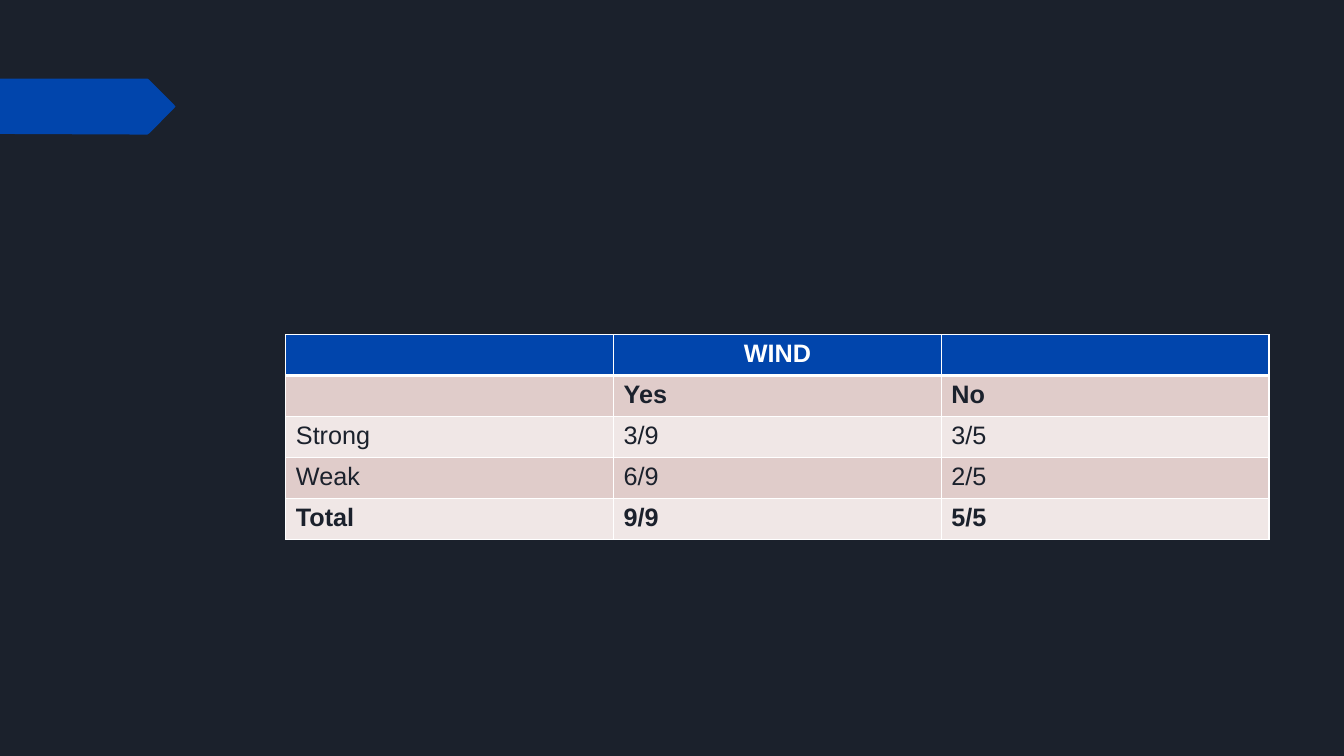
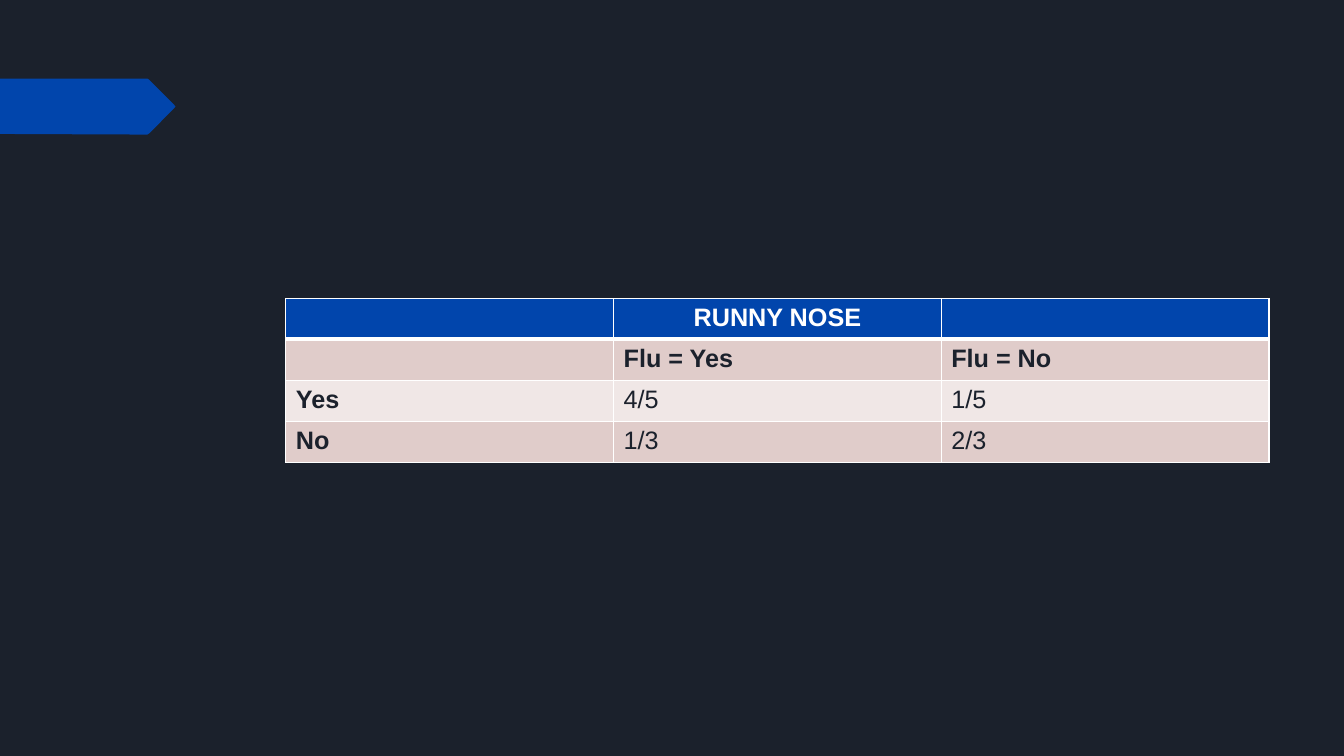
from lxml import etree
from pptx import Presentation
from pptx import util as u
from pptx.dml.color import RGBColor
from pptx.enum import text
from pptx.oxml.ns import qn

WIDTH, HEIGHT = u.Inches(13.33), u.Inches(7.5)
COLUMN, ROW = WIDTH / 100, HEIGHT / 100

NIGHT = RGBColor(0x1B, 0x21, 0x2C)
BLUE = RGBColor(0x01, 0x45, 0xAC)
ROSE = RGBColor(0xE0, 0xCC, 0xCA)
PALE_ROSE = RGBColor(0xF0, 0xE7, 0xE6)
WHITE = RGBColor(0xFF, 0xFF, 0xFF)
FONT = "Arial"

THIN, THICK = 1, 3
TABLE_LEFT, TABLE_WIDTH, ROW_HEIGHT = 21.27, 73.15, 5.42
BAND_BOX = (0, 10.4, 13.06, 7.4)
BAND_OUTLINE = [
    (0, 0), (0.84, 0), (0.85, 0.02), (0.99, 0.46), (1, 0.5),
    (0.99, 0.54), (0.85, 0.98), (0.84, 1), (0.78, 1), (0, 0.99),
]

WIND = [
    ["", "WIND", ""],
    ["", "Yes", "No"],
    ["Strong", "3/9", "3/5"],
    ["Weak", "6/9", "2/5"],
    ["Total", "9/9", "5/5"],
]
RUNNY_NOSE = [
    ["", "RUNNY NOSE", ""],
    ["", "Flu = Yes", "Flu = No"],
    ["Yes", "4/5", "1/5"],
    ["No", "1/3", "2/3"],
]


def grid_box(left, top, width, height):
    return [round(v) for v in (left * COLUMN, top * ROW, width * COLUMN, height * ROW)]


def write(frame, words, size=18, color=NIGHT, bold=False, align=text.PP_ALIGN.LEFT):
    paragraph = frame.paragraphs[0]
    paragraph.alignment = align
    run = paragraph.add_run()
    run.text = words
    run.font.name = FONT
    run.font.size = u.Pt(size)
    run.font.bold = bold
    run.font.color.rgb = color


def set_borders(cell, top=THIN, bottom=THIN):
    properties = cell._tc.get_or_add_tcPr()
    sides = {"lnL": THIN, "lnR": THIN, "lnT": top, "lnB": bottom}
    for position, (side, points) in enumerate(sides.items()):
        line = etree.Element(qn(f"a:{side}"), w=str(u.Pt(points)))
        fill = etree.SubElement(line, qn("a:solidFill"))
        etree.SubElement(fill, qn("a:srgbClr"), val=str(WHITE))
        properties.insert(position, line)


def add_band(slide, box):
    left, top, width, height = box
    points = [(round(x * width), round(y * height)) for x, y in BAND_OUTLINE]
    builder = slide.shapes.build_freeform(*points[0])
    builder.add_line_segments(points[1:], close=True)
    band = builder.convert_to_shape(left, top)
    band.shadow.inherit = False
    band.fill.solid()
    band.fill.fore_color.rgb = BLUE
    band.line.fill.background()


def add_probabilities(slide, box, rows, bold_rows, bold_columns):
    table = slide.shapes.add_table(len(rows), len(rows[0]), *box).table
    for r, values in enumerate(rows):
        header = r == 0
        for c, value in enumerate(values):
            cell = table.cell(r, c)
            cell.fill.solid()
            cell.fill.fore_color.rgb = BLUE if header else ROSE if r % 2 else PALE_ROSE
            set_borders(cell, top=THICK if r == 1 else THIN,
                        bottom=THICK if header else THIN)
            if value:
                write(cell.text_frame, value,
                      color=WHITE if header else NIGHT,
                      bold=r in bold_rows or c in bold_columns,
                      align=text.PP_ALIGN.CENTER if header else text.PP_ALIGN.LEFT)


def add_table_slide(deck, rows, top, bold_rows, bold_columns=()):
    slide = deck.slides.add_slide(deck.slide_layouts.get_by_name("Blank"))
    add_band(slide, grid_box(*BAND_BOX))
    box = grid_box(TABLE_LEFT, top, TABLE_WIDTH, ROW_HEIGHT * len(rows))
    add_probabilities(slide, box, rows, bold_rows, bold_columns)


def main():
    deck = Presentation()
    deck.slide_width, deck.slide_height = WIDTH, HEIGHT
    backdrop = deck.slide_master.background.fill
    backdrop.solid()
    backdrop.fore_color.rgb = NIGHT
    add_table_slide(deck, WIND, top=44.27, bold_rows=(0, 1, 4))
    add_table_slide(deck, RUNNY_NOSE, top=39.47, bold_rows=(0, 1), bold_columns=(0,))
    deck.save("out.pptx")


if __name__ == "__main__":
    main()
